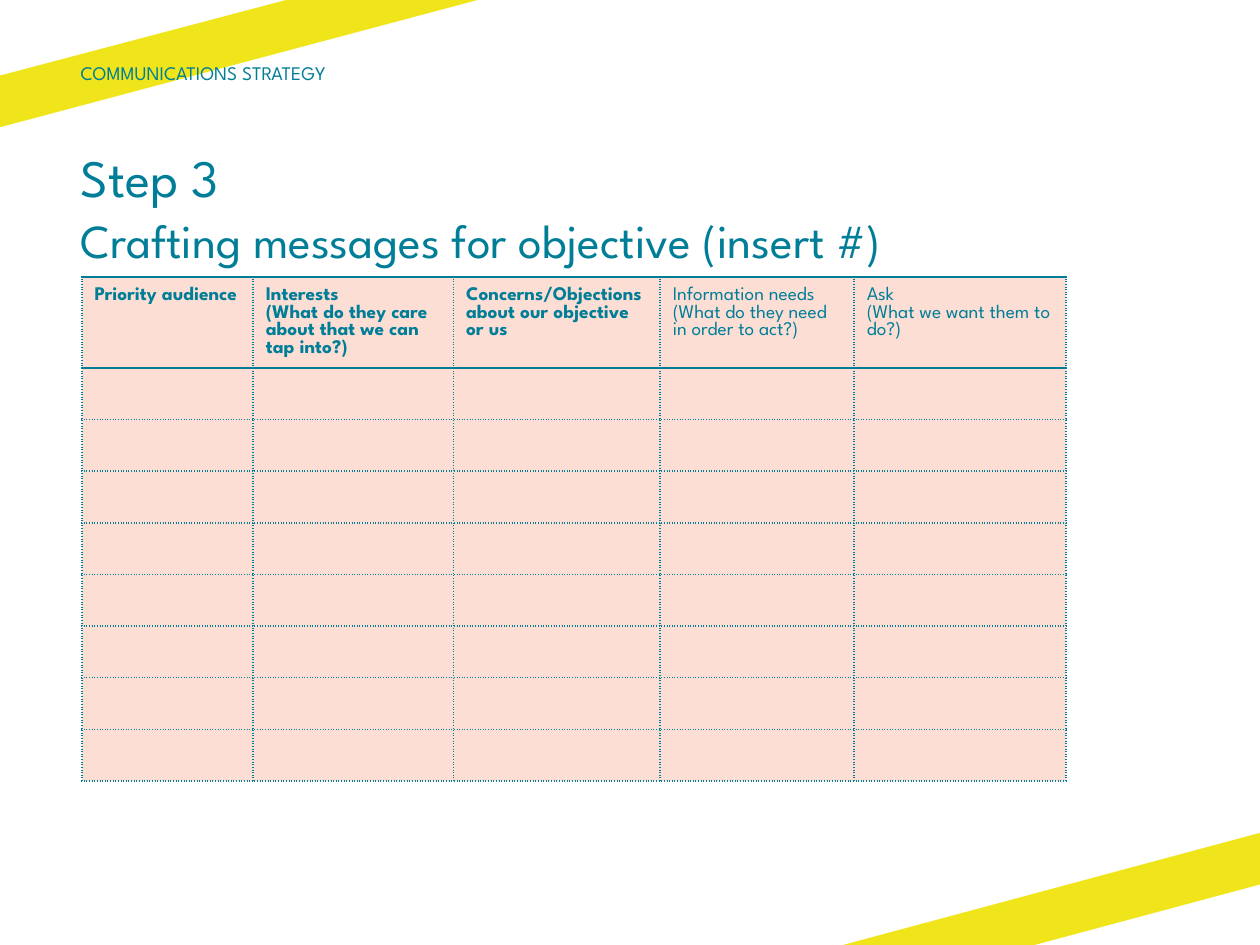
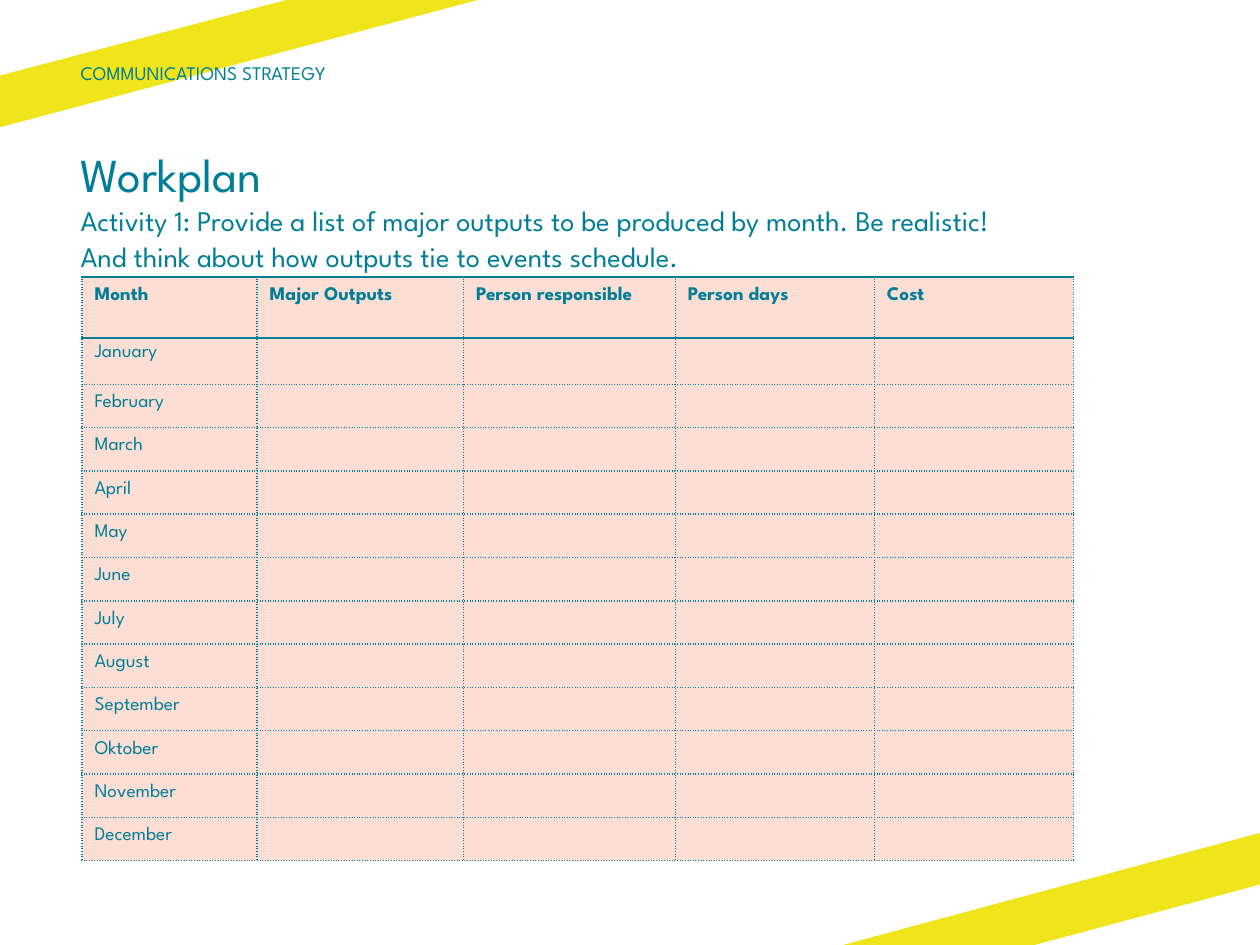
from dataclasses import dataclass

from lxml.etree import SubElement
from pptx import Presentation
from pptx.dml.color import RGBColor
from pptx.enum.text import MSO_ANCHOR as Anchor
from pptx.oxml.ns import qn
from pptx.slide import Slide
from pptx.table import _Cell as Cell
from pptx.util import Inches, Pt

TEAL, YELLOW, PINK = "007E97", "F0E51B", "FCDED5"
FONT = "League Spartan"
LEFT = 0.64
TITLE_LEADING = 1.26
CELL_LEADING = 10
BANDS = (
    ((2.27, 0), (0, 0.6), (0, 1.01), (3.79, 0)),
    ((6.69, 7.5), (8.21, 7.5), (10, 7.02), (10, 6.61)),
)
MONTHS = ("January", "February", "March", "April", "May", "June", "July",
          "August", "September", "Oktober", "November", "December")


@dataclass(frozen=True)
class Line:
    """One line of text with its size in points."""
    text: str
    size: float


@dataclass(frozen=True)
class Heading:
    """A column heading with its width in inches."""
    text: str
    width: float
    bold: bool = True


@dataclass(frozen=True)
class Page:
    """Title lines and table layout of one slide."""
    title: tuple[Line, ...]
    headings: tuple[Heading, ...]
    heights: tuple[float, ...]
    labels: tuple[str, ...] = ()
    tight_row: int = 0


PAGES = (
    Page(
        (Line("Step 3", 30), Line("Crafting messages for objective (insert #)", 27)),
        (Heading("Priority audience", 1.36),
         Heading("Interests\n(What do they care about that we can tap into?)", 1.59),
         Heading("Concerns/Objections about our objective or us", 1.64),
         Heading("Information needs (What do they need in order to act?)", 1.54, False),
         Heading("Ask\n(What we want them to do?)", 1.68, False)),
        (0.72,) + (0.41,) * 8,
    ),
    Page(
        (Line("Workplan", 27),
         Line("Activity 1: Provide a list of major outputs to be produced by month. Be realistic!", 16.2),
         Line("And think about how outputs tie to events schedule.", 16.2)),
        (Heading("Month", 1.39), Heading("Major Outputs", 1.64),
         Heading("Person responsible", 1.68), Heading("Person days", 1.58),
         Heading("Cost", 1.58)),
        (0.48, 0.37) + (0.31,) * 11,
        MONTHS,
        tight_row=1,
    ),
)


def rgb(color: str) -> RGBColor:
    """Turn a hex string into a colour."""
    return RGBColor.from_string(color)


def assign(obj: object, values: dict) -> None:
    """Set every named attribute on an object."""
    for name, value in values.items():
        setattr(obj, name, value)


def style(r, size: float, bold: bool = False) -> None:
    """Give a run the shared font and colour."""
    assign(r.font, {"name": FONT, "size": Pt(size), "bold": bold})
    r.font.color.rgb = rgb(TEAL)


def add_band(s: Slide, points: tuple) -> None:
    """Draw a slanted corner band."""
    start, *rest = [(Inches(x), Inches(y)) for x, y in points]
    builder = s.shapes.build_freeform(*start)
    builder.add_line_segments(rest)
    sp = builder.convert_to_shape()
    sp.shadow.inherit = False
    sp.fill.solid()
    sp.fill.fore_color.rgb = rgb(YELLOW)
    sp.line.fill.background()


def add_text(s: Slide, box: tuple, lines: tuple[Line, ...],
             anchor: Anchor, leading: float = 0) -> None:
    """Place lines of text without margins, with a leading relative to size."""
    tf = s.shapes.add_textbox(*map(Inches, box)).text_frame
    assign(tf, {"word_wrap": True, "vertical_anchor": anchor, "margin_left": 0,
                "margin_top": 0, "margin_right": 0, "margin_bottom": 0})
    tf.text = "\n".join(line.text for line in lines)
    for p, line in zip(tf.paragraphs, lines):
        if leading:
            p.line_spacing = Pt(round(line.size * leading, 1))
        style(p.runs[0], line.size)


def add_border(cell: Cell, side: str, solid: bool) -> None:
    """Draw one cell edge, solid or dotted."""
    ln = SubElement(cell._tc.get_or_add_tcPr(), qn(f"a:ln{side}"),
                    w=str(Pt(1.5 if solid else 1)))
    fill = SubElement(ln, qn("a:solidFill"))
    SubElement(fill, qn("a:srgbClr"), val=TEAL)
    SubElement(ln, qn("a:prstDash"), val="solid" if solid else "sysDot")


def fill_cell(cell: Cell, text: str, bold: bool, row: int, pad: float) -> None:
    """Write and format one table cell."""
    assign(cell, {"margin_left": Inches(0.1), "margin_right": Inches(0.1),
                  "margin_top": Inches(pad), "margin_bottom": Inches(pad)})
    for side, solid in {"L": False, "R": False, "T": row < 2, "B": row == 0}.items():
        add_border(cell, side, solid)
    cell.fill.solid()
    cell.fill.fore_color.rgb = rgb(PINK)
    cell.text_frame.text = text
    for p in cell.text_frame.paragraphs:
        p.line_spacing = Pt(CELL_LEADING)
        for r in p.runs:
            style(r, 11, bold)
        end = SubElement(p._p, qn("a:endParaRPr"), sz="1100")
        SubElement(end, qn("a:latin"), typeface=FONT)


def add_grid(s: Slide, page: Page) -> None:
    """Build the table of a page."""
    widths = [h.width for h in page.headings]
    box = (0.65, 2.2, sum(widths), sum(page.heights))
    table = s.shapes.add_table(len(page.heights), len(widths),
                               *map(Inches, box)).table
    table.horz_banding = False
    for col, width in zip(table.columns, widths):
        col.width = Inches(width)
    for i, (row, height) in enumerate(zip(table.rows, page.heights)):
        row.height = Inches(height)
        pad = 0.05 if i and i == page.tight_row else 0.08
        for j, (cell, heading) in enumerate(zip(row.cells, page.headings)):
            label = page.labels[i - 1] if page.labels and j == 0 else ""
            text, bold = (label, False) if i else (heading.text, heading.bold)
            fill_cell(cell, text, bold, i, pad)


def add_page(prs: Presentation, page: Page) -> None:
    """Add one slide with bands, title, table and running header."""
    s = prs.slides.add_slide(prs.slide_layouts[6])
    for points in BANDS:
        add_band(s, points)
    add_text(s, (LEFT, 1.13, 8.73, 1.02), page.title, Anchor.TOP, TITLE_LEADING)
    add_grid(s, page)
    add_text(s, (LEFT, 0.43, 4.57, 0.29), (Line("COMMUNICATIONS STRATEGY", 11),),
             Anchor.MIDDLE)


def main() -> None:
    """Build and save the deck."""
    prs = Presentation()
    assign(prs, {"slide_width": Inches(10), "slide_height": Inches(7.5)})
    for page in PAGES:
        add_page(prs, page)
    prs.save("out.pptx")


if __name__ == "__main__":
    main()
